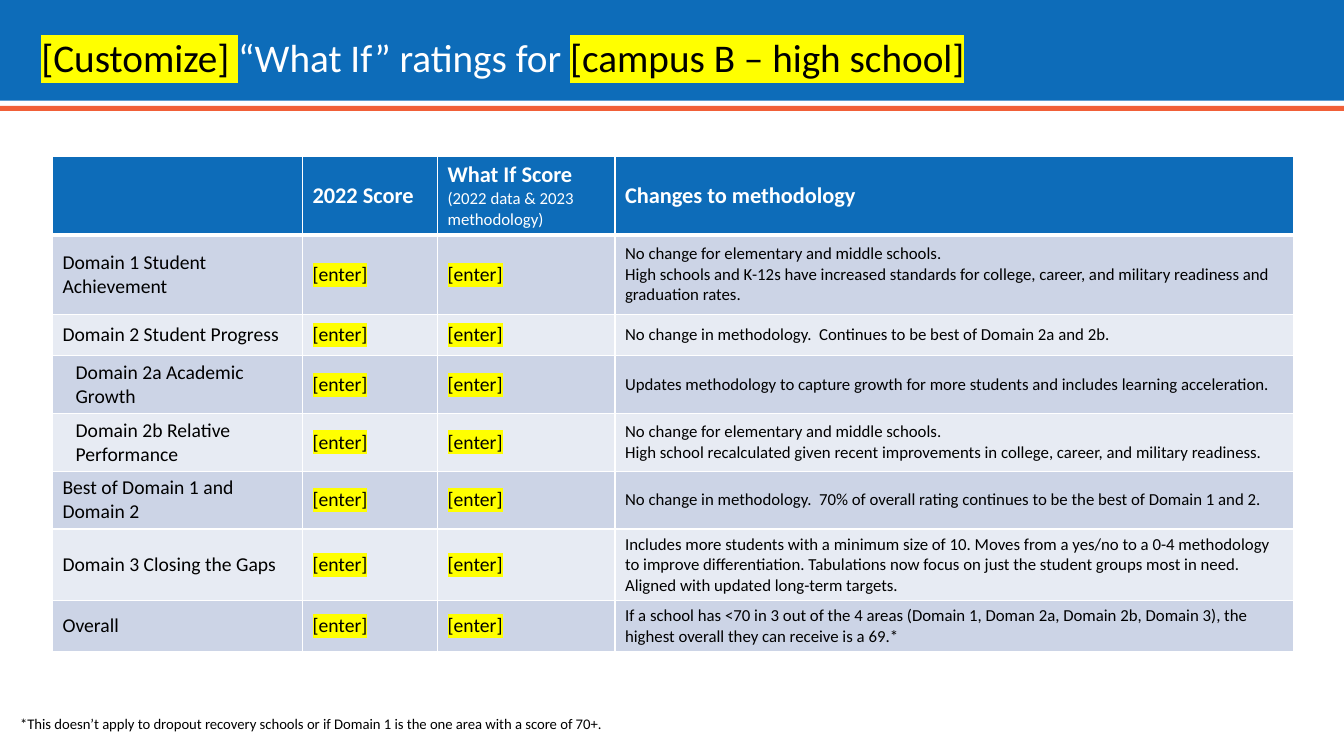
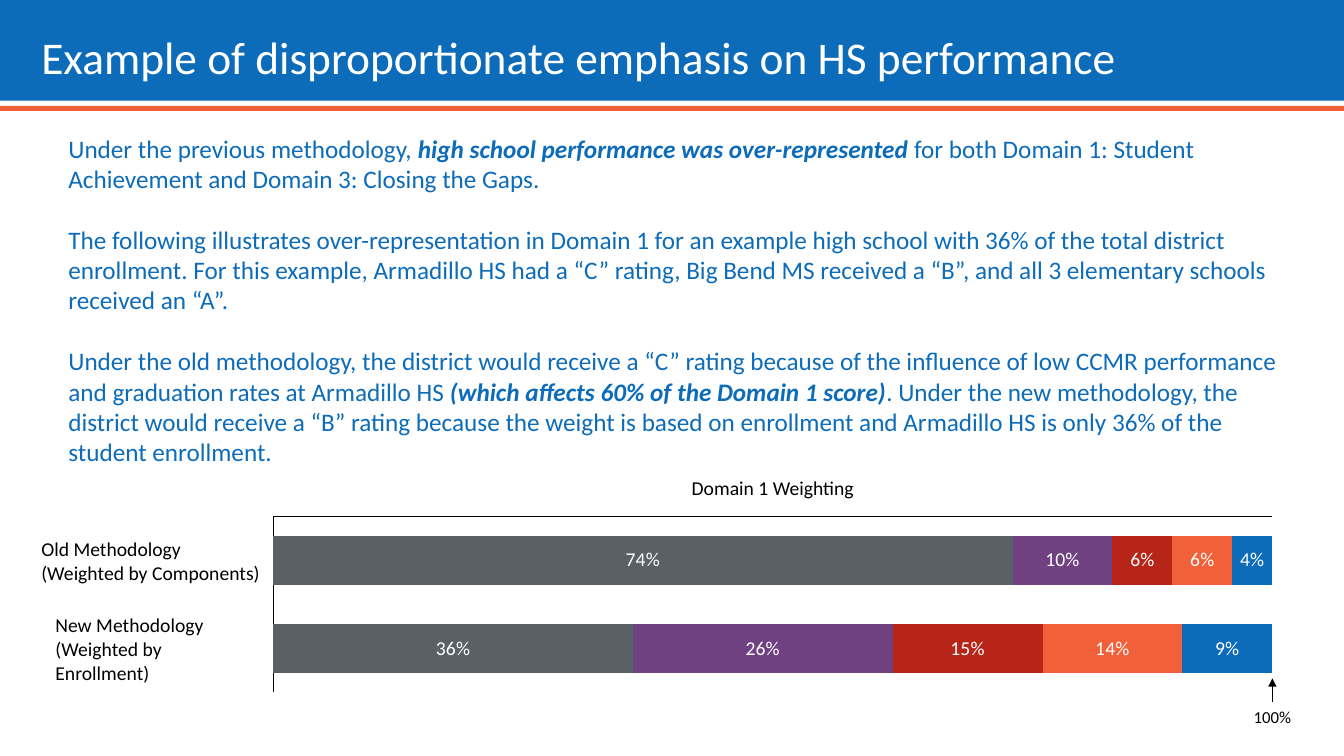
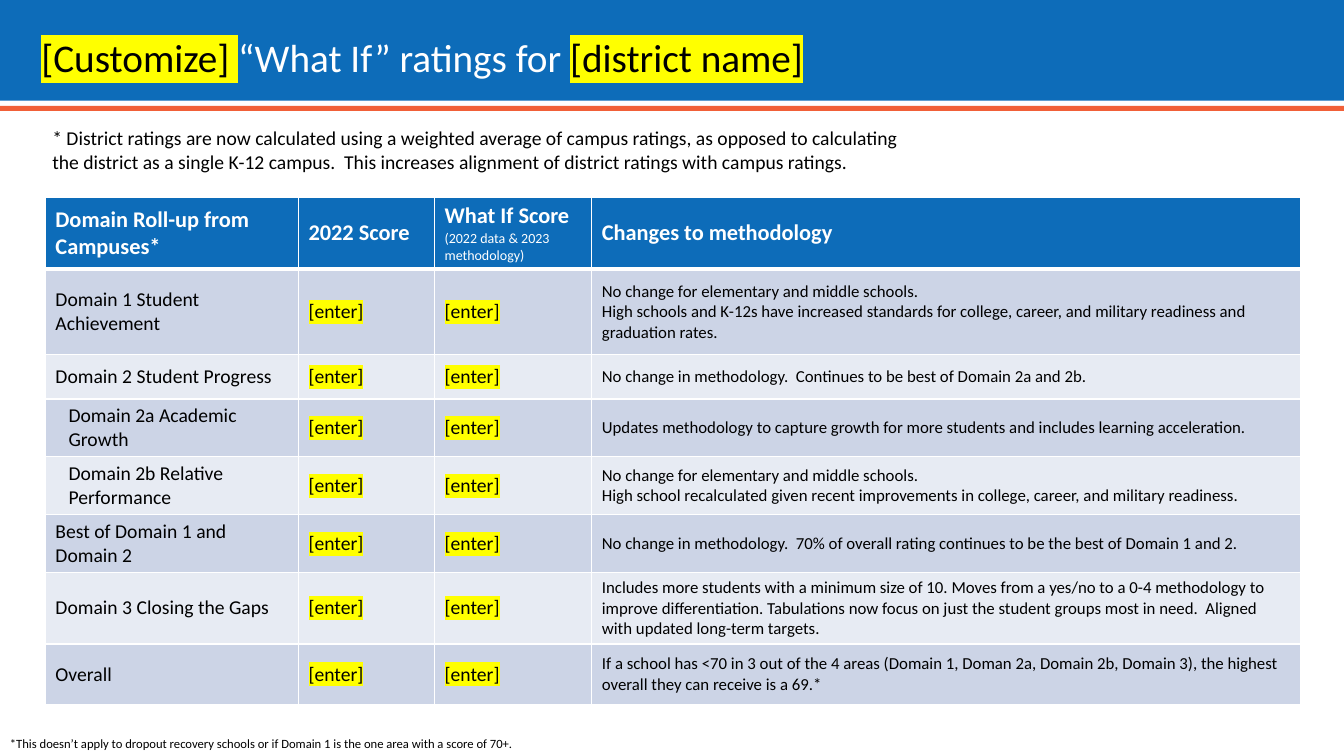
import pptx
import pptx.util
import pptx.dml.color
import pptx.chart.data
import pptx.enum.chart
import pptx.enum.shapes
import pptx.enum.text
import pptx.oxml
import pptx.oxml.ns
from dataclasses import dataclass

Inches = pptx.util.Inches
Pt = pptx.util.Pt
RGB = pptx.dml.color.RGBColor.from_string
Align = pptx.enum.text.PP_ALIGN
Anchor = pptx.enum.text.MSO_ANCHOR
qn = pptx.oxml.ns.qn
NS = pptx.oxml.ns.nsdecls


@dataclass(frozen=True)
class Theme:
    font: str = "Calibri"
    blue: str = "0D6CB9"
    red: str = "F16038"
    white: str = "FFFFFF"
    black: str = "000000"
    mark: str = "FFFF00"
    bands: tuple = ("CCD4E6", "E7EBF3")
    bars: tuple = ("596167", "704180", "B72418", "F16038", "0D6CB9")
    title: float = 28
    big: float = 32.4
    head: float = 16
    body: float = 18
    label: float = 14
    small: float = 12


T = Theme()


def write(frame, paras, size=T.label, color=T.black, bold=False, italic=False,
          mark=None, align=Align.LEFT, line=None, gap=0, indent=0, anchor=None):
    """Fill a frame; a paragraph is a string or a list of (text, format) runs."""
    if anchor is not None:
        frame.vertical_anchor = anchor
    for n, runs in enumerate(paras):
        para = frame.add_paragraph() if n else frame.paragraphs[0]
        para.alignment = align
        if line:
            para.line_spacing = line
        if n and gap:
            para.space_before = Pt(gap)
        if indent:
            props = para._p.get_or_add_pPr()
            props.set("marL", str(Inches(indent)))
            props.set("indent", "0")
        for text, own in [(runs, {})] if isinstance(runs, str) else runs:
            look = dict(size=size, color=color, bold=bold, italic=italic, mark=mark) | own
            run = para.add_run()
            run.text = text
            font = run.font
            font.size, font.name = Pt(look["size"]), T.font
            font.bold, font.italic = look["bold"], look["italic"]
            font.color.rgb = RGB(look["color"])
            if look["mark"]:
                run._r.rPr.find(qn("a:solidFill")).addnext(pptx.oxml.parse_xml(
                    f'<a:highlight {NS("a")}><a:srgbClr val="{look["mark"]}"/></a:highlight>'))


def label(slide, at, paras, wrap=True, **look):
    """Add a text box; unwrapped labels have no insets."""
    frame = slide.shapes.add_textbox(*map(Inches, at)).text_frame
    frame.word_wrap = wrap
    if not wrap:
        frame.margin_left = frame.margin_right = frame.margin_top = frame.margin_bottom = 0
    write(frame, paras, **look)


deck = pptx.Presentation()
deck.slide_width, deck.slide_height = Inches(13.33), Inches(7.5)
layout = deck.slide_layouts[5]

# Slides and titles
head = layout.placeholders[0]
head.left, head.top, head.width, head.height = map(Inches, (0.31, 0.18, 11.21, 0.82))
hint = dict(color=T.black, mark=T.mark)
titles = [
    ([("[Customize] ", hint), ("“What If” ratings for ", {}),
      ("[campus B – high school]", hint)], T.title),
    ("Example of disproportionate emphasis on HS performance", T.big),
    ([("[Customize] ", hint), ("“What If” ratings for ", {}),
      ("[district name]", hint)], T.title),
]
slides = []
for text, size in titles:
    slide = deck.slides.add_slide(layout)
    frame = slide.shapes.title.text_frame
    frame.auto_size = pptx.enum.text.MSO_AUTO_SIZE.NONE
    write(frame, [text], size=size, color=T.white, line=0.9, anchor=Anchor.MIDDLE)
    slides.append(slide)
campus, weights, district = slides

# Shared bands, moved to the layout
for n, (top, high, color) in enumerate([(0, 1, T.blue), (1.05, 0.05, T.red)]):
    band = campus.shapes.add_shape(pptx.enum.shapes.MSO_SHAPE.RECTANGLE, 0, Inches(top),
                                   deck.slide_width, Inches(high))
    band.shadow.inherit = False
    band.fill.solid()
    band.fill.fore_color.rgb = RGB(color)
    band.line.fill.background()
    band.element.nvSpPr.cNvPr.set("id", str(20 + n))
    layout.shapes.element.insert(2 + n, band.element)

# Rating tables
same = "No change for elementary and middle schools."
rows = [
    ("Domain 1 Student Achievement",
     [same, "High schools and K-12s have increased standards for college, career, "
      "and military readiness and graduation rates."]),
    ("Domain 2 Student Progress",
     ["No change in methodology.  Continues to be best of Domain 2a and 2b."]),
    ("Domain 2a Academic Growth",
     ["Updates methodology to capture growth for more students and includes "
      "learning acceleration."]),
    ("Domain 2b Relative Performance",
     [same, "High school recalculated given recent improvements in college, career, "
      "and military readiness."]),
    ("Best of Domain 1 and Domain 2",
     ["No change in methodology.  70% of overall rating continues to be the best "
      "of Domain 1 and 2."]),
    ("Domain 3 Closing the Gaps",
     ["Includes more students with a minimum size of 10. Moves from a yes/no to a 0-4 "
      "methodology to improve differentiation. Tabulations now focus on just the student "
      "groups most in need.  Aligned with updated long-term targets."]),
    ("Overall",
     ["If a school has <70 in 3 out of the 4 areas (Domain 1, Doman 2a, Domain 2b, "
      "Domain 3), the highest overall they can receive is a 69.*"]),
]
tables = [
    (campus, (0.52, 1.55, 12.3, 4.87), (2.48, 1.34, 1.76, 6.73),
     (0.55, 0.79, 0.41, 0.51, 0.41, 0.41, 0.51, 0.36), "", 12),
    (district, (0.45, 1.96, 12.44, 4.98), (2.51, 1.35, 1.56, 7.03),
     (0.62, 0.85, 0.44, 0.54, 0.5, 0.5, 0.62, 0.6), "Domain Roll-up from Campuses*", 10),
]
for slide, at, wides, highs, corner, sub in tables:
    holder = slide.shapes.add_table(len(highs), len(wides), *map(Inches, at))
    table = holder.table
    table.horz_banding = False
    for col, wide in zip(table.columns, wides):
        col.width = Inches(wide)
    for row, high in zip(table.rows, highs):
        row.height = Inches(high)
    holder.height = Inches(at[3])

    note = [("(2022 data & 2023 methodology)", dict(size=sub, bold=False))]
    top = dict(size=T.head, color=T.white, bold=True)
    grid = [[([corner] if corner else [], top), (["2022 Score"], top),
             (["What If Score", note], top), (["Changes to methodology"], top)]]
    for name, change in rows:
        inset = 0.13 if name.startswith(("Domain 2a", "Domain 2b")) else 0
        enter = (["[enter]"], dict(mark=T.mark))
        grid.append([([name], dict(indent=inset)), enter, enter,
                     (change, dict(size=T.small))])

    for r, line in enumerate(grid):
        for c, (paras, look) in enumerate(line):
            cell = table.cell(r, c)
            cell.vertical_anchor = Anchor.MIDDLE
            write(cell.text_frame, paras, **look)
            edges = {"L": 1, "R": 1, "T": 3 if r == 1 else 1, "B": 1 if r else 3}
            for side, thick in edges.items():
                cell._tc.get_or_add_tcPr().append(pptx.oxml.parse_xml(
                    f'<a:ln{side} {NS("a")} w="{Pt(thick)}"><a:solidFill>'
                    f'<a:srgbClr val="{T.white}"/></a:solidFill></a:ln{side}>'))
            cell.fill.solid()
            cell.fill.fore_color.rgb = RGB(T.bands[(r - 1) % 2] if r else T.blue)

# Notes around the tables
foot = ("*This doesn’t apply to dropout recovery schools or if Domain 1 is the one area "
        "with a score of 70+.")
label(campus, (0.1, 7.04, 9.45, 0.29), [foot], size=10.5)
label(district, (0, 7.25, 9.45, 0.25), [foot], size=9)
label(district, (0.42, 1.17, 8.61, 0.63),
      ["* District ratings are now calculated using a weighted average of campus ratings, "
       "as opposed to calculating the district as a single K-12 campus.  This increases "
       "alignment of district ratings with campus ratings."], anchor=Anchor.MIDDLE)

# Weighting story
strong = dict(bold=True, italic=True)
label(weights, (0.58, 1.27, 12.24, 3.74), [
    [("Under the previous methodology, ", {}),
     ("high school performance was over-represented ", strong),
     ("for both Domain 1: Student Achievement and Domain 3: Closing the Gaps.", {})],
    "The following illustrates over-representation in Domain 1 for an example high school "
    "with 36% of the total district enrollment. For this example, Armadillo HS had a “C” "
    "rating, Big Bend MS received a “B”, and all 3 elementary schools received an “A”.",
    [("Under the old methodology, the district would receive a “C” rating because of the "
      "influence of low CCMR performance and graduation rates at Armadillo HS ", {}),
     ("(which affects 60% of the Domain 1 score)", strong),
     (". Under the new methodology, the district would receive a “B” rating because the "
      "weight is based on enrollment and Armadillo HS is only 36% of the student "
      "enrollment.", {})],
], size=T.body, color=T.blue, gap=22)

# Weighting chart
data = pptx.chart.data.CategoryChartData()
data.categories = ["1", "2"]
shares = [(74, 36), (10, 26), (6, 15), (6, 14), (4, 9)]
for n, pair in enumerate(shares, 1):
    data.add_series(f"Series {n}", pair)
chart = weights.shapes.add_chart(
    pptx.enum.chart.XL_CHART_TYPE.BAR_STACKED,
    *map(Inches, (2.62, 5.03, 10.09, 1.93)), data).chart
chart.has_legend = chart.has_title = False
chart.font.name, chart.font.size = T.font, Pt(T.label)
chart.font.color.rgb = RGB(T.black)

plot = chart.plots[0]
plot.gap_width, plot.overlap, plot.vary_by_categories = 80, 100, False
for bar, color in zip(plot.series, T.bars):
    bar.format.fill.solid()
    bar.format.fill.fore_color.rgb = RGB(color)
    tags = bar.data_labels
    tags.show_value = True
    tags.number_format, tags.number_format_is_linked = '0"%"', False
    tags.font.name, tags.font.size = T.font, Pt(T.label)
    tags.font.color.rgb = RGB(T.white)

for axis in (chart.category_axis, chart.value_axis):
    axis.has_major_gridlines = False
    axis.major_tick_mark = axis.minor_tick_mark = pptx.enum.chart.XL_TICK_MARK.NONE
    axis.tick_label_position = pptx.enum.chart.XL_TICK_LABEL_POSITION.NONE
    axis.format.line.color.rgb = RGB(T.black)
    axis.format.line.width = Pt(0.75)
chart.category_axis.reverse_order = True
chart.value_axis.minimum_scale, chart.value_axis.maximum_scale = 0, 100

area = chart.element.find(".//" + qn("c:plotArea"))
for old in area.findall(qn("c:layout")):
    area.remove(old)
places = "".join(f'<c:{k} val="{v}"/>' for k, v in [
    ("layoutTarget", "inner"), ("xMode", "edge"), ("yMode", "edge"),
    ("x", 0.009), ("y", 0.047), ("w", 0.982), ("h", 0.906)])
area.insert(0, pptx.oxml.parse_xml(
    f'<c:layout {NS("c")}><c:manualLayout>{places}</c:manualLayout></c:layout>'))

# Chart labels and the arrow at 100%
label(weights, (0.41, 5.33, 2.17, 0.47), ["Old Methodology", "(Weighted by Components)"],
      wrap=False, anchor=Anchor.MIDDLE)
label(weights, (0.55, 6.2, 2.03, 0.47), ["New Methodology", "(Weighted by Enrollment)"],
      wrap=False, anchor=Anchor.MIDDLE)
label(weights, (6.86, 4.73, 1.61, 0.23), ["Domain 1 Weighting"],
      wrap=False, align=Align.CENTER, anchor=Anchor.BOTTOM)
label(weights, (12.43, 7.01, 0.38, 0.2), ["100%"],
      wrap=False, size=T.small, align=Align.CENTER)
arrow = weights.shapes.add_connector(pptx.enum.shapes.MSO_CONNECTOR.STRAIGHT,
                                     *map(Inches, (12.62, 6.96, 12.62, 6.73)))
arrow.line.color.rgb = RGB(T.black)
arrow.line.width = Pt(0.75)
arrow.line._get_or_add_ln().append(
    pptx.oxml.parse_xml(f'<a:tailEnd {NS("a")} type="triangle"/>'))
arrow.element.spPr.append(pptx.oxml.parse_xml(f'<a:effectLst {NS("a")}/>'))

deck.save("out.pptx")
